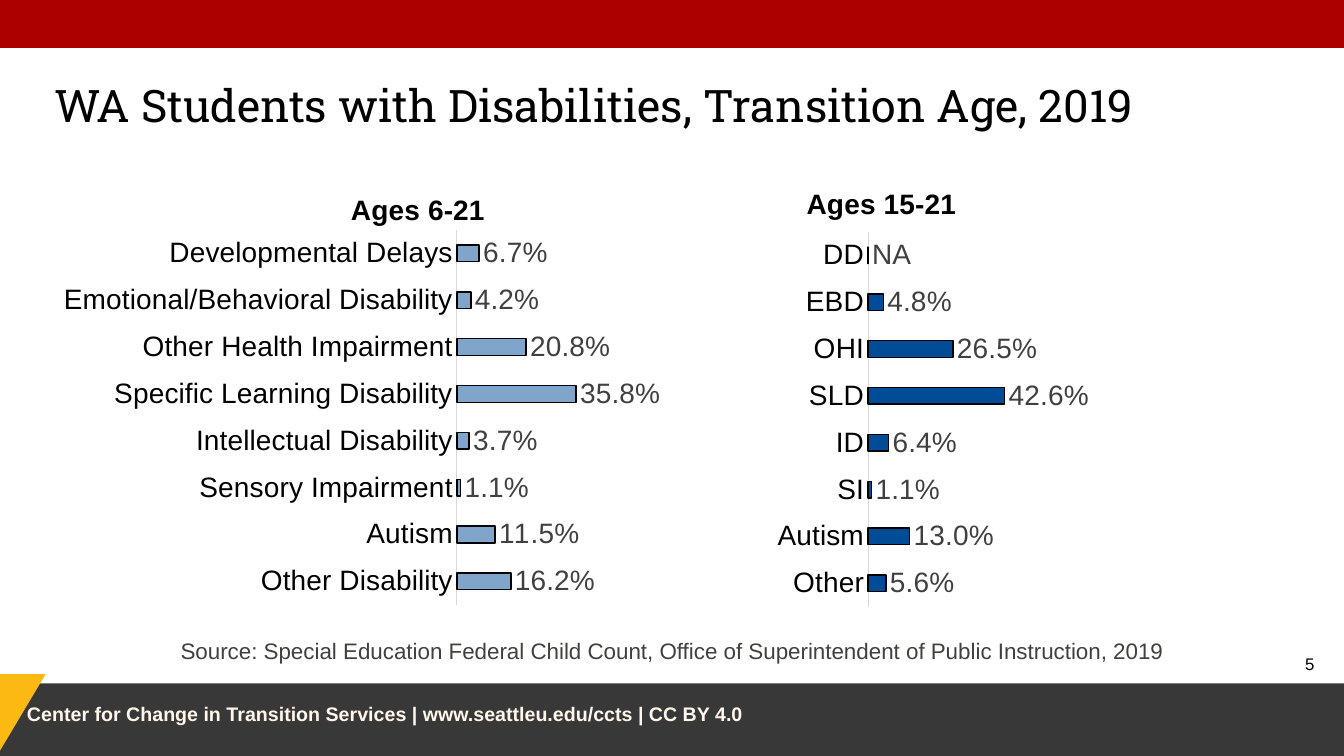
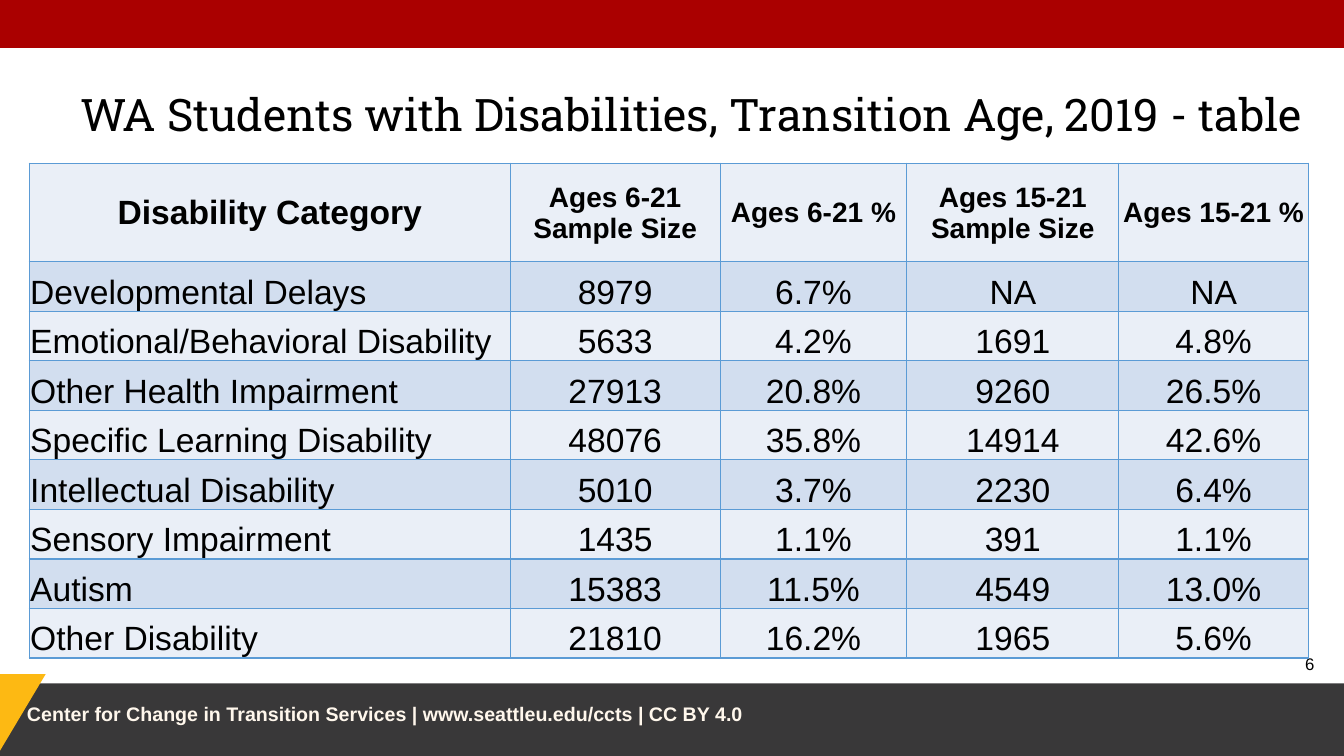
from lxml import etree
from pptx import Presentation
from pptx import util as u
from pptx.chart import data as chart_data
from pptx.dml.color import RGBColor
from pptx.enum import chart as charts, shapes, text
from pptx.oxml import ns

Pt = u.Pt
rgb = RGBColor.from_string

RED, CHARCOAL, GOLD, CREAM = "AA0000", "393839", "FDB913", "FFF7EC"
BLACK, GRAY, SOURCE_GRAY = "000000", "404040", "40403D"
NAVY, AXIS_GRAY = "004C97", "D9D9D9"
TABLE_LINE, TABLE_LIGHT, TABLE_DARK = "5B9BD5", "EAEFF7", "D2DEEF"

# category, short name, then count and share for ages 6-21 and for ages 15-21
DISABILITIES = [
    ("Developmental Delays", "DD", 8979, 0.067, None, None),
    ("Emotional/Behavioral Disability", "EBD", 5633, 0.042, 1691, 0.048),
    ("Other Health Impairment", "OHI", 27913, 0.208, 9260, 0.265),
    ("Specific Learning Disability", "SLD", 48076, 0.358, 14914, 0.426),
    ("Intellectual Disability", "ID", 5010, 0.037, 2230, 0.064),
    ("Sensory Impairment", "SI", 1435, 0.011, 391, 0.011),
    ("Autism", "Autism", 15383, 0.115, 4549, 0.13),
    ("Other Disability", "Other", 21810, 0.162, 1965, 0.056),
]


def add_run(paragraph, words, size, color=BLACK, bold=False, font="Arial"):
    run = paragraph.add_run()
    run.text = words
    run.font.name, run.font.size, run.font.bold = font, Pt(size), bold
    run.font.color.rgb = rgb(color)


def set_chart_layout(parent, target, **fractions):
    """Fix a chart part's place, as fractions of the chart's size."""
    layout = parent.find(ns.qn("c:layout"))
    if layout is None:
        layout = etree.Element(ns.qn("c:layout"))
        parent.insert(0, layout)
    manual = etree.SubElement(layout, ns.qn("c:manualLayout"))
    settings = {"layoutTarget": target, "xMode": "edge", "yMode": "edge", **fractions}
    for name, value in settings.items():
        if value is not None:
            etree.SubElement(manual, ns.qn("c:" + name)).set("val", str(value))


presentation = Presentation()
presentation.slide_width, presentation.slide_height = Pt(960), Pt(540)
layout = presentation.slide_layouts[5]

# Titles and page numbers
TITLE = "WA Students with Disabilities, Transition Age, 2019"
slides = []
for number, title_text, left, width, height in [
    (5, TITLE, 31.7, 907, 75),
    (6, TITLE + " - table", 50.4, 896, 88.6),
]:
    slide = presentation.slides.add_slide(layout)
    slides.append(slide)
    title = slide.shapes.title
    title.left, title.top, title.width, title.height = Pt(left), Pt(39.6), Pt(width), Pt(height)
    frame = title.text_frame
    frame.auto_size = text.MSO_AUTO_SIZE.NONE
    frame.vertical_anchor = text.MSO_ANCHOR.MIDDLE
    paragraph = frame.paragraphs[0]
    paragraph.alignment, paragraph.line_spacing = text.PP_ALIGN.LEFT, 0.9
    add_run(paragraph, title_text, 32, font="Roboto Slab")

    page_number = slide.shapes.add_textbox(Pt(912.2), Pt(459.4), Pt(33.8), Pt(28.8))
    page_number.text_frame.word_wrap = True
    page_number.text_frame.vertical_anchor = text.MSO_ANCHOR.MIDDLE
    paragraph = page_number.text_frame.paragraphs[0]
    paragraph.alignment = text.PP_ALIGN.RIGHT
    add_run(paragraph, str(number), 12)

chart_slide, table_slide = slides

# Bands and footer, drawn on a slide and then moved to the shared layout
shared = []
for preset, color, left, top, width, height in [
    (shapes.MSO_SHAPE.RECTANGLE, RED, 0, 0, 960, 34.3),
    (shapes.MSO_SHAPE.RECTANGLE, CHARCOAL, 0, 488.2, 960, 51.8),
    (shapes.MSO_SHAPE.RIGHT_TRIANGLE, GOLD, 0, 481.6, 32.6, 54.7),
]:
    band = chart_slide.shapes.add_shape(preset, Pt(left), Pt(top), Pt(width), Pt(height))
    band.shadow.inherit = False
    band.fill.solid()
    band.fill.fore_color.rgb = rgb(color)
    band.line.fill.background()
    if preset == shapes.MSO_SHAPE.RIGHT_TRIANGLE:
        band.element.spPr.find(ns.qn("a:xfrm")).set("flipV", "1")
    shared.append(band)

footer = chart_slide.shapes.add_textbox(Pt(12.2), Pt(498.2), Pt(533), Pt(24.5))
footer.text_frame.word_wrap = True
add_run(footer.text_frame.paragraphs[0],
        "Center for Change in Transition Services | www.seattleu.edu/ccts | CC BY 4.0",
        14, CREAM, bold=True)
shared.append(footer)
for shape in shared:
    layout.shapes.element.append(shape.element)

# Two bar charts
for heading, name_column, share_column, left, top, plot_width, title_x, title_y, opacity in [
    ("Ages 6-21", 0, 3, 20.9, 95.8, 0.405, 0.385, 0.11, 50),
    ("Ages 15-21", 1, 5, 314.6, 97.2, 0.39, 0.439, 0.093, 100),
]:
    bars = chart_data.CategoryChartData(number_format="0.0%")
    bars.categories = [row[name_column] for row in DISABILITIES]
    bars.add_series("Series 1", [row[share_column] or 0 for row in DISABILITIES])
    chart = chart_slide.shapes.add_chart(
        charts.XL_CHART_TYPE.BAR_CLUSTERED, Pt(left), Pt(top), Pt(587.5), Pt(344.2), bars).chart
    chart.font.name, chart.font.size = "Arial", Pt(20)
    chart.font.color.rgb = rgb(BLACK)
    chart.has_legend = False

    chart_xml = chart.element.find(ns.qn("c:chart"))
    background = etree.Element(ns.qn("c:spPr"))
    etree.SubElement(background, ns.qn("a:noFill"))
    etree.SubElement(etree.SubElement(background, ns.qn("a:ln")), ns.qn("a:noFill"))
    chart_xml.addnext(background)

    chart.has_title = True
    add_run(chart.chart_title.text_frame.paragraphs[0], heading, 20, bold=True)
    set_chart_layout(chart_xml.find(ns.qn("c:title")), None, x=title_x, y=title_y)
    set_chart_layout(chart_xml.find(ns.qn("c:plotArea")), "inner",
                     x=0.52, y=0.199, w=plot_width, h=0.778)

    category_axis, value_axis = chart.category_axis, chart.value_axis
    category_axis.reverse_order = True
    category_axis.major_tick_mark = charts.XL_TICK_MARK.NONE
    category_axis.has_major_gridlines = False
    category_axis.format.line.color.rgb = rgb(AXIS_GRAY)
    category_axis.format.line.width = Pt(0.75)
    value_axis.minimum_scale, value_axis.maximum_scale = 0, 1
    value_axis.has_major_gridlines = False
    value_axis.visible = False

    plot = chart.plots[0]
    plot.gap_width, plot.vary_by_categories = 182, False
    series = plot.series[0]
    series.format.fill.solid()
    series.format.fill.fore_color.rgb = rgb(NAVY)
    if opacity < 100:
        fill_color = series.format.fill._xPr.find(".//" + ns.qn("a:srgbClr"))
        etree.SubElement(fill_color, ns.qn("a:alpha")).set("val", str(opacity * 1000))
    series.format.line.color.rgb = rgb(BLACK)
    series.format.line.width = Pt(1)

    labels = series.data_labels
    labels.show_value = True
    labels.position = charts.XL_LABEL_POSITION.OUTSIDE_END
    labels.number_format, labels.number_format_is_linked = "0.0%", False
    labels.font.name, labels.font.size = "Arial", Pt(20)
    labels.font.color.rgb = rgb(GRAY)
    for index, row in enumerate(DISABILITIES):
        if row[share_column] is None:
            label = series.points[index].data_label
            add_run(label.text_frame.paragraphs[0], "NA", 20, GRAY)
            label.position = charts.XL_LABEL_POSITION.OUTSIDE_END

source = chart_slide.shapes.add_textbox(Pt(31.7), Pt(451.4), Pt(897), Pt(26.6))
source.text_frame.word_wrap = True
paragraph = source.text_frame.paragraphs[0]
paragraph.alignment = text.PP_ALIGN.CENTER
add_run(paragraph, "Source: Special Education Federal Child Count, "
        "Office of Superintendent of Public Instruction, 2019", 16, SOURCE_GRAY)

# Table
table_rows = [["Disability Category", "Ages 6-21 Sample Size", "Ages 6-21 %",
               "Ages 15-21 Sample Size", "Ages 15-21 %"]]
for name, _, *figures in DISABILITIES:
    table_rows.append([name] + [
        "NA" if figure is None else f"{figure:.1%}" if figure < 1 else str(figure)
        for figure in figures])

column_widths = [343.6, 149.9, 133.4, 151.4, 135.4]
row_heights = [70.4] + [35.4] * len(DISABILITIES)
table = table_slide.shapes.add_table(
    len(row_heights), len(column_widths), Pt(20.9), Pt(116.6),
    Pt(sum(column_widths)), Pt(sum(row_heights))).table
table.horz_banding = False
for column, width in zip(table.columns, column_widths):
    column.width = Pt(width)
for row, height in zip(table.rows, row_heights):
    row.height = Pt(height)

for row_index, values in enumerate(table_rows):
    is_header = row_index == 0
    for column_index, value in enumerate(values):
        cell = table.cell(row_index, column_index)
        cell.margin_left = cell.margin_right = cell.margin_top = Pt(0.7)
        cell.margin_bottom = Pt(0)
        cell.vertical_anchor = text.MSO_ANCHOR.MIDDLE if is_header else text.MSO_ANCHOR.BOTTOM
        for side in ("lnL", "lnR", "lnT", "lnB"):
            border = etree.SubElement(cell._tc.get_or_add_tcPr(), ns.qn("a:" + side))
            border.set("w", str(Pt(1)))
            border_fill = etree.SubElement(border, ns.qn("a:solidFill"))
            etree.SubElement(border_fill, ns.qn("a:srgbClr")).set("val", TABLE_LINE)
        cell.fill.solid()
        cell.fill.fore_color.rgb = rgb(TABLE_DARK if row_index % 2 else TABLE_LIGHT)
        paragraph = cell.text_frame.paragraphs[0]
        if is_header or column_index > 0:
            paragraph.alignment = text.PP_ALIGN.CENTER
        size = 20 if is_header and column_index > 0 else 24
        add_run(paragraph, value, size, bold=is_header)

presentation.save("out.pptx")
